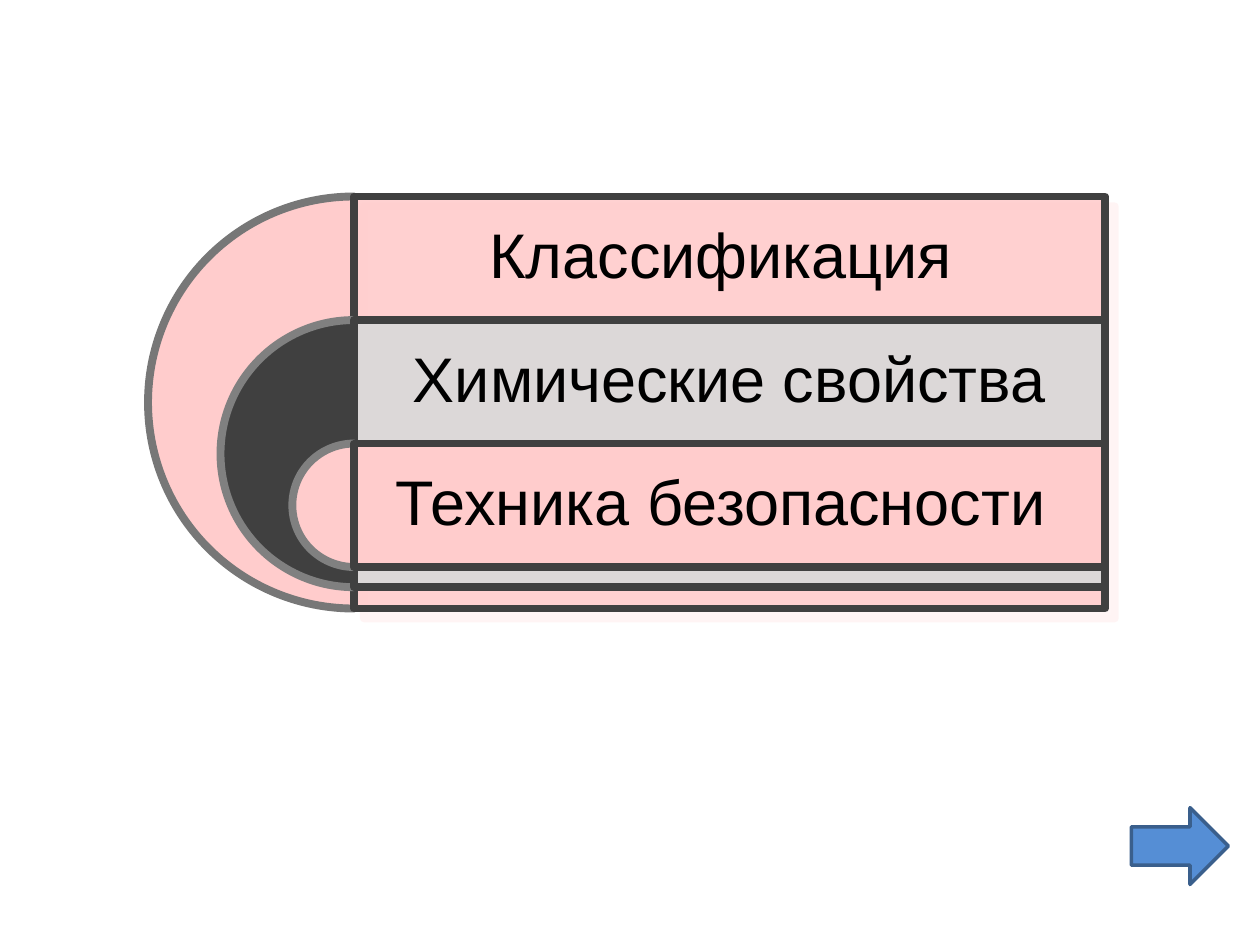
from lxml import etree
from pptx import Presentation
from pptx import util as u
from pptx.dml.color import RGBColor
from pptx.enum import shapes, text
from pptx.oxml import ns

COLORS = {"pink": "FFCCCC", "dark": "404040", "light": "D9D9D9", "gray": "777777",
          "midgray": "808080", "black": "000000", "blue": "558ED5", "navy": "3A5F8C"}
LEFT, TOP, WIDTH, BAND = 2.81, 1.56, 5.96, 0.98
ROWS = [
    ("Классификация ", 3.27, "pink", "gray", "pink", 90),
    ("Химические свойства", 2.12, "dark", "midgray", "light", 90),
    ("Техника безопасности ", 0.98, "pink", "midgray", "pink", 100),
]


class Deck:
    """Holds the style and the current slide."""

    def __init__(self):
        self.prs = Presentation()
        self.prs.slide_width, self.prs.slide_height = u.Inches(10), u.Inches(7.5)
        self.s = self.prs.slides.add_slide(self.prs.slide_layouts[6])

    def color(self, name):
        return RGBColor.from_string(COLORS[name])

    def shape(self, parent, kind, box, fill, line, width=4.5, alpha=100):
        sp = parent.add_shape(kind, *map(u.Inches, box))
        sp.shadow.inherit = False
        sp.fill.solid()
        sp.fill.fore_color.rgb = self.color(fill)
        sp.line.color.rgb = self.color(line)
        sp.line.width = u.Pt(width)
        if alpha < 100:
            clr = sp.fill._xPr.find(ns.qn("a:solidFill"))[0]
            etree.SubElement(clr, ns.qn("a:alpha"), val=str(alpha * 1000))
        return sp

    def half_disc(self, parent, top, size, fill, line):
        sp = self.shape(parent, shapes.MSO_SHAPE.PIE,
                        (LEFT - size / 2, top, size, size), fill, line)
        sp.adjustments[0], sp.adjustments[1] = 54, 162

    def shadow(self, sp, name):
        effects = sp._element.spPr.find(ns.qn("a:effectLst"))
        shd = etree.SubElement(effects, ns.qn("a:outerShdw"), blurRad="0",
                               dist=str(u.Pt(8)), dir="2700000", rotWithShape="0")
        clr = etree.SubElement(shd, ns.qn("a:srgbClr"), val=COLORS[name])
        etree.SubElement(clr, ns.qn("a:alpha"), val="20000")

    def label(self, parent, box, words):
        tf = parent.add_textbox(*map(u.Inches, box)).text_frame
        tf.word_wrap = True
        tf.vertical_anchor = text.MSO_ANCHOR.MIDDLE
        tf.margin_left = tf.margin_right = tf.margin_top = tf.margin_bottom = u.Inches(0.15)
        p = tf.paragraphs[0]
        p.alignment = text.PP_ALIGN.CENTER
        p.line_spacing = 0.9
        r = p.add_run()
        r.text = words
        r.font.name, r.font.size = "Arial", u.Pt(36)
        r.font.color.rgb = self.color("black")


def main():
    deck = Deck()
    target = deck.s.shapes.add_group_shape().shapes
    for i, (words, size, disc, edge, fill, alpha) in enumerate(ROWS):
        top = TOP + i * BAND
        deck.half_disc(target, top, size, disc, edge)
        bar = deck.shape(target, shapes.MSO_SHAPE.RECTANGLE, (LEFT, top, WIDTH, size),
                         fill, "dark", alpha=alpha)
        if i == 0:
            deck.shadow(bar, "pink")
        deck.label(target, (LEFT, top, WIDTH, BAND), words)
    deck.shape(deck.s.shapes, shapes.MSO_SHAPE.RIGHT_ARROW, (8.98, 6.41, 0.77, 0.61),
               "blue", "navy", 2)
    deck.prs.save("out.pptx")


if __name__ == "__main__":
    main()
